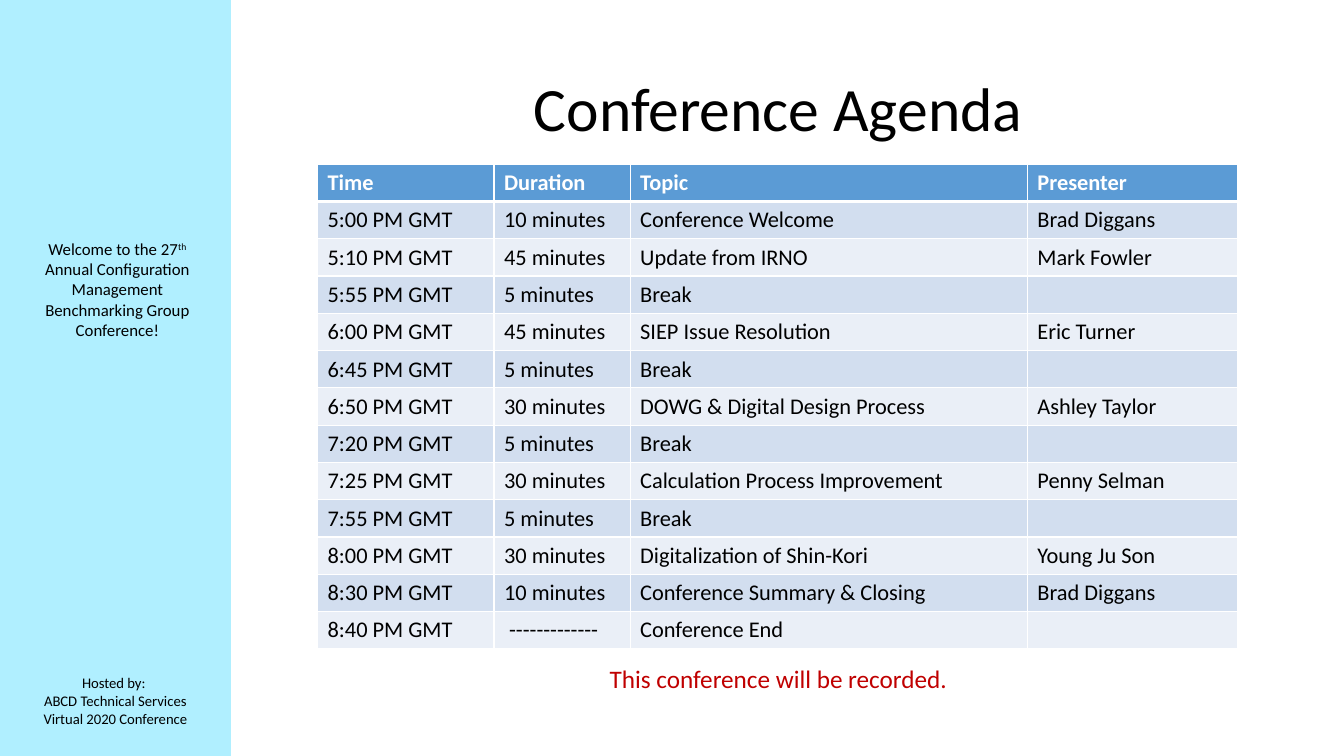
from lxml.etree import SubElement
from pptx import Presentation
from pptx.dml.color import RGBColor
from pptx.enum.shapes import MSO_SHAPE
from pptx.enum.text import MSO_ANCHOR, MSO_AUTO_SIZE, PP_ALIGN
from pptx.oxml.ns import qn
from pptx.util import Inches, Pt

FONT = "Calibri"
BLACK, WHITE, RED = "000000", "FFFFFF", "C00000"
SIDEBAR_BLUE, HEADER_BLUE = "B0EFFF", "5B9BD5"
BANDS = ("D2DEEF", "EAEFF7")

COLUMN_WIDTHS = (1.75, 1.35, 3.94, 2.09)
ROW_HEIGHT = 0.37
TABLE_TEXT_SIZE = 16
AGENDA = (
    ("Time", "Duration", "Topic", "Presenter"),
    ("5:00 PM GMT", "10 minutes", "Conference Welcome", "Brad Diggans"),
    ("5:10 PM GMT", "45 minutes", "Update from IRNO", "Mark Fowler"),
    ("5:55 PM GMT", "5 minutes", "Break", ""),
    ("6:00 PM GMT", "45 minutes", "SIEP Issue Resolution", "Eric Turner"),
    ("6:45 PM GMT", "5 minutes", "Break", ""),
    ("6:50 PM GMT", "30 minutes", "DOWG & Digital Design Process", "Ashley Taylor"),
    ("7:20 PM GMT", "5 minutes", "Break", ""),
    ("7:25 PM GMT", "30 minutes", "Calculation Process Improvement", "Penny Selman"),
    ("7:55 PM GMT", "5 minutes", "Break", ""),
    ("8:00 PM GMT", "30 minutes", "Digitalization of Shin-Kori", "Young Ju Son"),
    ("8:30 PM GMT", "10 minutes", "Conference Summary & Closing", "Brad Diggans"),
    ("8:40 PM GMT", " -------------", "Conference End", ""),
)


def rgb(color):
    return RGBColor.from_string(color)


def add_run(paragraph, text, size, color=BLACK, bold=False):
    run = paragraph.add_run()
    run.text = text
    run.font.name = FONT
    run.font.size = Pt(size)
    run.font.bold = bold
    run.font.color.rgb = rgb(color)
    return run


def add_sidebar(slide):
    shape = slide.shapes.add_shape(
        MSO_SHAPE.RECTANGLE, 0, 0, Inches(2.29), Inches(7.5)
    )
    shape.shadow.inherit = False
    shape.fill.solid()
    shape.fill.fore_color.rgb = rgb(SIDEBAR_BLUE)
    shape.line.fill.background()


def add_centered_text(slide, left, top, width, height, lines, size, color=BLACK,
                      grow=True):
    """Add a text box; each line is a tuple of run texts. Return its text frame."""
    box = slide.shapes.add_textbox(
        Inches(left), Inches(top), Inches(width), Inches(height)
    )
    frame = box.text_frame
    frame.word_wrap = True
    frame.auto_size = MSO_AUTO_SIZE.SHAPE_TO_FIT_TEXT if grow else MSO_AUTO_SIZE.NONE
    for index, texts in enumerate(lines):
        paragraph = frame.add_paragraph() if index else frame.paragraphs[0]
        paragraph.alignment = PP_ALIGN.CENTER
        for text in texts:
            add_run(paragraph, text, size, color)
    return frame


def set_borders(cell, widths):
    """Draw white borders; widths maps a side (L, R, T, B) to points."""
    properties = cell._tc.get_or_add_tcPr()
    for side, width in widths.items():
        line = SubElement(properties, qn(f"a:ln{side}"), w=str(Pt(width)))
        fill = SubElement(line, qn("a:solidFill"))
        SubElement(fill, qn("a:srgbClr"), val=WHITE)


def fill_cell(cell, text, row_index):
    is_header = row_index == 0
    set_borders(cell, {
        "L": 1, "R": 1,
        "T": 3 if row_index == 1 else 1,
        "B": 3 if is_header else 1,
    })
    cell.fill.solid()
    cell.fill.fore_color.rgb = rgb(
        HEADER_BLUE if is_header else BANDS[(row_index - 1) % 2]
    )
    paragraph = cell.text_frame.paragraphs[0]
    if text:
        add_run(paragraph, text, TABLE_TEXT_SIZE, WHITE if is_header else BLACK,
                is_header)
    else:
        SubElement(paragraph._p, qn("a:endParaRPr"), sz=str(TABLE_TEXT_SIZE * 100))


def add_agenda_table(slide):
    table = slide.shapes.add_table(
        len(AGENDA), len(COLUMN_WIDTHS), Inches(3.15), Inches(1.63),
        Inches(sum(COLUMN_WIDTHS)), Inches(ROW_HEIGHT * len(AGENDA))
    ).table
    for column, width in zip(table.columns, COLUMN_WIDTHS):
        column.width = Inches(width)
    for row_index, texts in enumerate(AGENDA):
        table.rows[row_index].height = Inches(ROW_HEIGHT)
        for column_index, text in enumerate(texts):
            fill_cell(table.cell(row_index, column_index), text, row_index)


def main():
    presentation = Presentation()
    presentation.slide_width = Inches(13.33)
    presentation.slide_height = Inches(7.5)
    slide = presentation.slides.add_slide(presentation.slide_layouts[6])

    add_sidebar(slide)
    welcome = add_centered_text(slide, 0.15, 2.32, 2.03, 1.11, [(
        "Welcome to the 27", "th",
        " Annual Configuration Management Benchmarking Group Conference!",
    )], 12)
    ordinal = welcome.paragraphs[0].runs[1]
    ordinal._r.get_or_add_rPr().set("baseline", "30000")
    add_centered_text(slide, 0.13, 6.64, 2.03, 0.63, [
        ("Hosted by: ",),
        ("ABCD Technical Services",),
        ("Virtual 2020 Conference",),
    ], 10.5)

    title = add_centered_text(slide, 2.5, -0.34, 10.44, 1.83,
                              [("Conference Agenda",)], 44, grow=False)
    title.vertical_anchor = MSO_ANCHOR.BOTTOM
    title.paragraphs[0].line_spacing = 0.9

    add_agenda_table(slide)
    add_centered_text(slide, 2.5, 6.53, 10.44, 0.4,
                      [("This conference will be recorded.",)], 18, RED)
    presentation.save("out.pptx")


if __name__ == "__main__":
    main()
